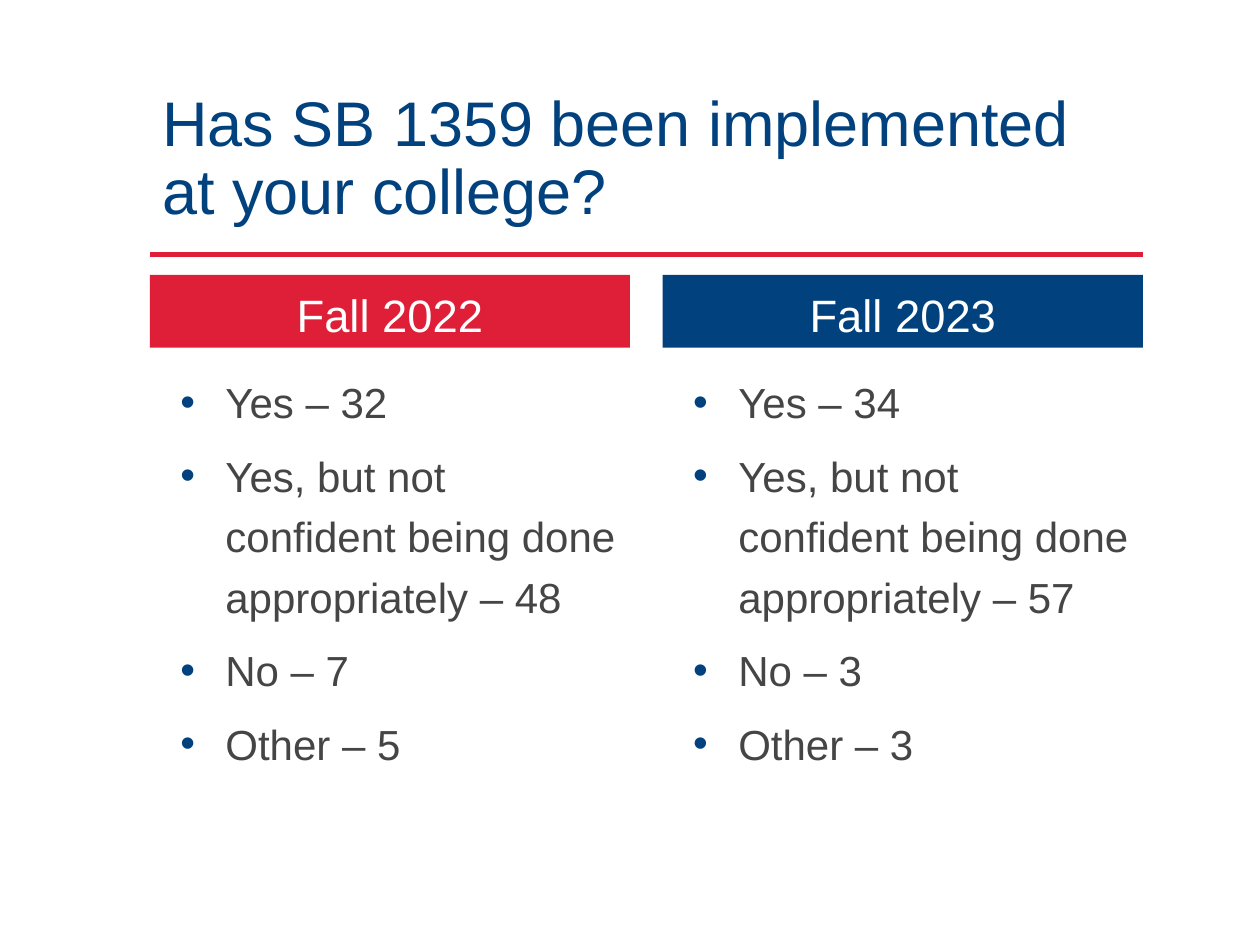
from lxml import etree
from pptx import Presentation
from pptx.dml.color import RGBColor
from pptx.enum.shapes import MSO_CONNECTOR
from pptx.enum.text import MSO_ANCHOR, MSO_AUTO_SIZE, PP_ALIGN
from pptx.oxml.ns import qn
from pptx.util import Cm, Pt

LINE = MSO_CONNECTOR.STRAIGHT
TOP, BASE = MSO_ANCHOR.TOP, MSO_ANCHOR.BOTTOM
LEFT, MID = PP_ALIGN.LEFT, PP_ALIGN.CENTER
FIXED = MSO_AUTO_SIZE.NONE

HUES = {"red": "DE1F37", "blue": "00417E", "grey": "454545", "white": "FFFFFF"}
RGB = {name: RGBColor.from_string(code) for name, code in HUES.items()}

FORMS = {
    "title": {"size": 36, "hue": "blue", "anchor": BASE,
              "para": {"alignment": LEFT, "line_spacing": 0.9}},
    "head": {"size": 25.9, "hue": "white", "anchor": BASE,
             "para": {"alignment": MID, "line_spacing": 0.8, "space_before": Pt(7.5)}},
    "list": {"size": 24, "hue": "grey", "anchor": TOP,
             "para": {"alignment": LEFT, "line_spacing": 1.2, "space_before": Pt(7.5)}},
}


def write(shape, box, lines, kind):
    form = FORMS[kind]
    for name, size in zip(("left", "top", "width", "height"), box):
        setattr(shape, name, Cm(size))
    frame = shape.text_frame
    frame.text = "\n".join(lines)
    traits = {"word_wrap": True, "auto_size": FIXED, "vertical_anchor": form["anchor"]}
    for name, value in traits.items():
        setattr(frame, name, value)
    for para in frame.paragraphs:
        for name, value in form["para"].items():
            setattr(para, name, value)
        font = para.runs[0].font
        for name, value in {"name": "Arial", "size": Pt(form["size"]), "bold": False}.items():
            setattr(font, name, value)
        font.color.rgb = RGB[form["hue"]]


def bullet(para, hue):
    props = para._p.get_or_add_pPr()
    props.set("marL", str(Cm(1.27)))
    props.set("indent", str(Cm(-0.91)))
    tint = etree.SubElement(props, qn("a:buClr"))
    etree.SubElement(tint, qn("a:srgbClr"), val=HUES[hue])
    etree.SubElement(props, qn("a:buFont"), typeface="Arial")
    etree.SubElement(props, qn("a:buChar"), char="•")


deck = Presentation()
deck.slide_width, deck.slide_height = Cm(25.4), Cm(19.05)
slide = deck.slides.add_slide(deck.slide_layouts[4])
slots = slide.placeholders

EDGE, SPAN, COL = 3.02, 20.02, 9.68
write(slots[0], (EDGE, 2.24, SPAN, 2.49),
      ["Has SB 1359 been implemented at your college?"], "title")

rule = slide.shapes.add_connector(LINE, Cm(EDGE), Cm(5.13), Cm(EDGE + SPAN), Cm(5.13))
rule.line.color.rgb = RGB["red"]
rule.line.width = Pt(2.5)
etree.SubElement(rule._element.spPr, qn("a:effectLst"))

LABELS = ["Yes", "Yes, but not confident being done appropriately", "No", "Other"]
TERMS = [("Fall 2022", "red", [32, 48, 7, 5]), ("Fall 2023", "blue", [34, 57, 3, 3])]

for i, (term, hue, counts) in enumerate(TERMS):
    left = EDGE + i * (SPAN - COL)
    head, body = slots[2 * i + 1], slots[2 * i + 2]
    write(head, (left, 5.54, COL, 1.47), [term], "head")
    head.fill.solid()
    head.fill.fore_color.rgb = RGB[hue]
    lines = [f"{label} – {count}" for label, count in zip(LABELS, counts)]
    write(body, (left, 7.26, COL, 9.53), lines, "list")
    for para in body.text_frame.paragraphs:
        bullet(para, "blue")

deck.save("out.pptx")
